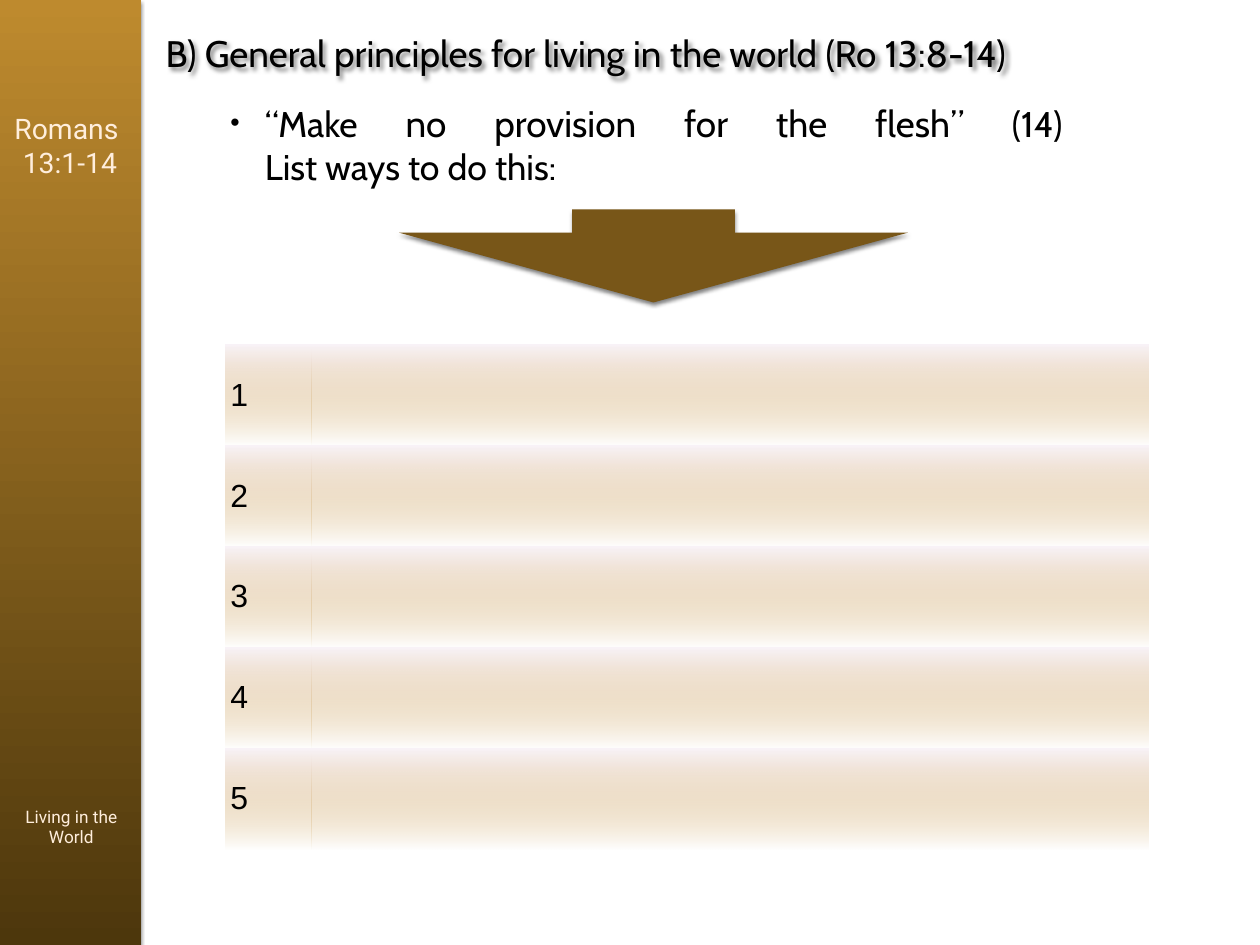
from lxml.etree import SubElement
from pptx import Presentation
from pptx.dml.color import RGBColor
from pptx.enum.shapes import MSO_SHAPE
from pptx.enum.text import MSO_ANCHOR, MSO_AUTO_SIZE, PP_ALIGN
from pptx.oxml.ns import qn
from pptx.util import Inches, Pt

HEADING = "B) General principles for living in the world (Ro 13:8-14)"
LIST_LINES = [[("“Make ", 29), ("no provision for the flesh", 30), ("” (14)", 29)],
              [("List ways to do this: ", 29)]]
ROWS = 5


def rgb(code):
    return RGBColor.from_string(code)


def add(parent, tag, **attrs):
    return SubElement(parent, qn(tag), {k: str(v) for k, v in attrs.items()})


class SlideBuilder:
    gold, brown, arrow = "BE8A2E", "4D370C", "785618"
    cream, black = "FFEEDC", "000000"
    row_top, row_end = "F9F3F8", "C48E33"

    def __init__(self, slide):
        self.s = slide

    def place(self, sp, left, top, width, height):
        box = {"left": left, "top": top, "width": width, "height": height}
        for name, value in box.items():
            setattr(sp, name, Inches(value))

    def gradient(self, fill, *colours):
        fill.gradient()
        fill.gradient_angle = 270
        for stop, colour in zip(fill.gradient_stops, colours):
            stop.color.rgb = rgb(colour)

    def shadow(self, sp, blur=3, dist=2, angle=90, alpha=50):
        sp.shadow.inherit = False
        effects = sp._element.spPr.find(qn("a:effectLst"))
        outer = add(effects, "a:outerShdw", blurRad=Pt(blur), dist=Pt(dist),
                    dir=angle * 60000, algn="ctr", rotWithShape=0)
        colour = add(outer, "a:srgbClr", val=self.black)
        add(colour, "a:alpha", val=alpha * 1000)

    def frame(self, sp, margin=0.06, wrap=True):
        tf = sp.text_frame
        inset = Inches(margin)
        layout = {"margin_left": inset, "margin_right": inset,
                  "margin_top": inset, "margin_bottom": inset,
                  "vertical_anchor": MSO_ANCHOR.MIDDLE, "word_wrap": wrap,
                  "auto_size": MSO_AUTO_SIZE.SHAPE_TO_FIT_TEXT}
        for name, value in layout.items():
            setattr(tf, name, value)
        return tf

    def fill_text(self, p, lines, font, colour, align):
        """Fill a paragraph with lines, each a list of (text, size) runs."""
        p.alignment = align
        p.space_before = Pt(0)
        for i, line in enumerate(lines):
            if i:
                p.add_line_break()
            for text, size in line:
                r = p.add_run()
                r.text = text
                for name, value in {"name": font, "size": Pt(size), "bold": False}.items():
                    setattr(r.font, name, value)
                r.font.color.rgb = rgb(colour)

    def shape(self, kind, box):
        sp = self.s.shapes.add_shape(kind, *map(Inches, box))
        sp.line.fill.background()
        self.shadow(sp)
        return sp

    def label(self, box, lines, wrap=True):
        sp = self.s.shapes.add_textbox(*map(Inches, box))
        tf = self.frame(sp, wrap=wrap)
        self.fill_text(tf.paragraphs[0], lines, "Roboto", self.cream, PP_ALIGN.CENTER)

    def title(self, box, text, size):
        sp = self.s.shapes.title
        self.place(sp, *box)
        sp.fill.background()
        self.shadow(sp, blur=4, dist=3, angle=45)
        tf = self.frame(sp, margin=0, wrap=False)
        self.fill_text(tf.paragraphs[0], [[(text, size)]], "Cabin", self.black, PP_ALIGN.LEFT)

    def bullet(self, box, lines, indent):
        sp = self.s.placeholders[1]
        self.place(sp, *box)
        p = self.frame(sp).paragraphs[0]
        pPr = p._p.get_or_add_pPr()
        pPr.set("marL", str(Inches(indent)))
        pPr.set("indent", str(-Inches(indent)))
        add(pPr, "a:buSzPct", val=75000)
        add(pPr, "a:buChar", char="•")
        self.fill_text(p, lines, "Cabin", self.black, PP_ALIGN.JUSTIFY)

    def numbered_table(self, box, rows, widths):
        sp = self.s.shapes.add_table(rows, len(widths), *map(Inches, box))
        table = sp.table
        table.first_row = table.horz_banding = False
        style = sp._element.find(".//" + qn("a:tableStyleId"))
        style.text = "{2D5ABB26-0587-4C30-8999-92F81FD0307C}"
        for column, width in zip(table.columns, widths):
            column.width = Inches(width)
        for cell in table.iter_cells():
            self.gradient(cell.fill, self.row_top, self.row_end)
            end_colour = list(cell._tc.iter(qn("a:srgbClr")))[-1]
            add(end_colour, "a:alpha", val=0)
            for side in ("left", "right", "top", "bottom"):
                setattr(cell, "margin_" + side, Inches(0.06))
            cell.vertical_anchor = MSO_ANCHOR.MIDDLE
        for i in range(rows):
            p = table.cell(i, 0).text_frame.paragraphs[0]
            self.fill_text(p, [[(str(i + 1), 26)]], "Arial", self.black, PP_ALIGN.LEFT)


def main():
    prs = Presentation()
    prs.slide_width, prs.slide_height = Inches(14.22), Inches(10.67)
    b = SlideBuilder(prs.slides.add_slide(prs.slide_layouts[1]))

    # Side bar with passage and series name
    bar = b.shape(MSO_SHAPE.RECTANGLE, (-0.01, 0, 1.6, 10.67))
    b.gradient(bar.fill, b.gold, b.brown)
    b.label((-0.01, 1.23, 1.6, 0.81), [[("Romans ", 23)], [("13:1-14", 23)]], wrap=False)
    b.label((-0.05, 9.07, 1.71, 0.53), [[("Living in the World", 14)]])

    # Heading and bullet
    b.title((1.87, 0.29, 9.69, 0.6), HEADING, 30)
    b.bullet((2.54, 1.06, 9.51, 1.13), LIST_LINES, 0.39)

    # Arrow pointing down to the answers
    arrow = b.shape(MSO_SHAPE.RIGHT_ARROW, (6.85, 0.02, 1.05, 5.74))
    arrow.rotation = 90
    arrow.adjustments[0], arrow.adjustments[1] = 0.32, 0.75
    arrow.fill.solid()
    arrow.fill.fore_color.rgb = rgb(b.arrow)

    # Numbered rows for the answers
    b.numbered_table((2.54, 3.89, 10.42, 5.7), ROWS, (0.98, 9.44))

    prs.save("out.pptx")


if __name__ == "__main__":
    main()
